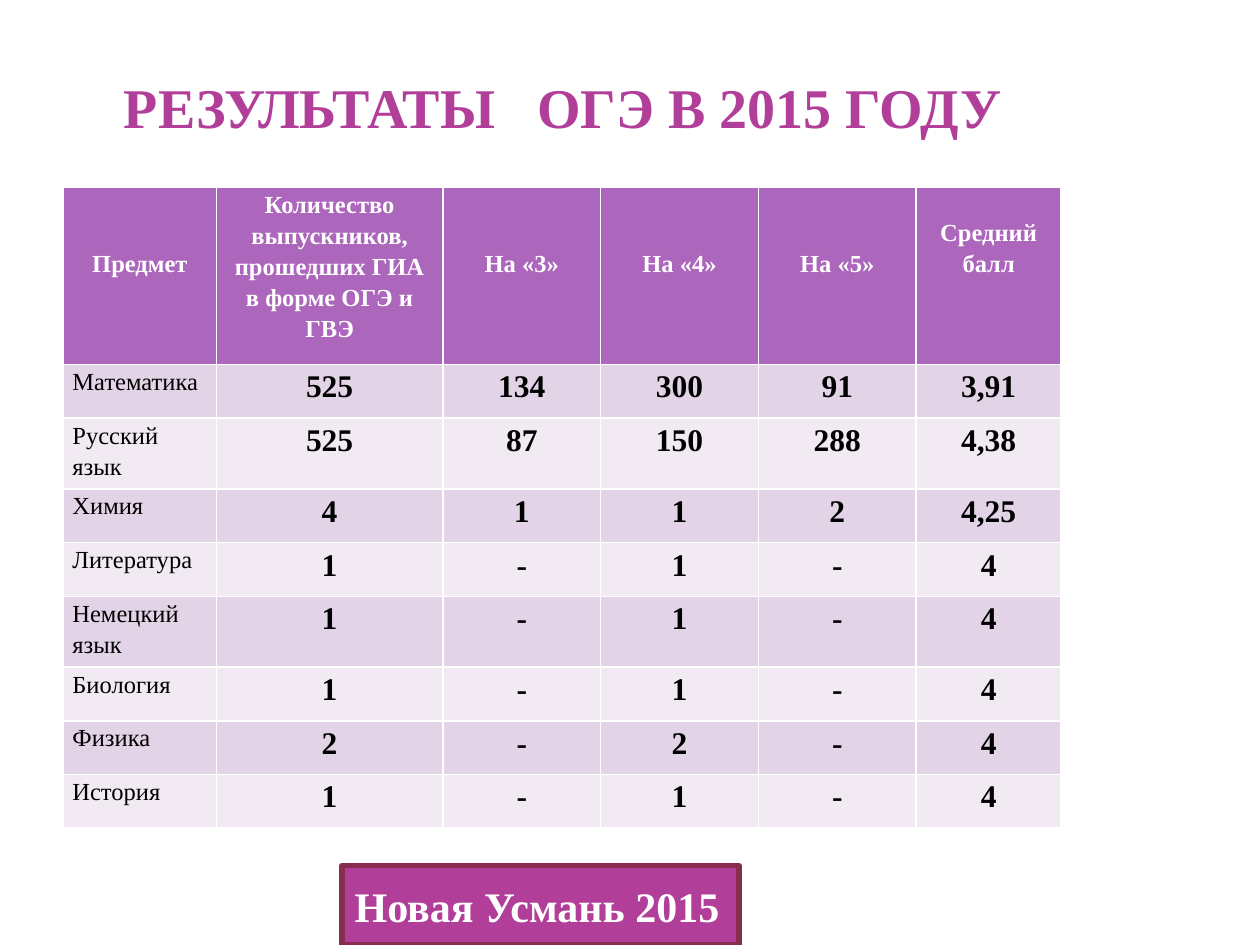
from pptx import Presentation
from pptx.dml.color import RGBColor
from pptx.enum.shapes import MSO_SHAPE
from pptx.enum.text import MSO_ANCHOR, PP_ALIGN
from pptx.util import Cm, Pt

RECTANGLE = MSO_SHAPE.RECTANGLE
TOP, MIDDLE, BOTTOM = MSO_ANCHOR.TOP, MSO_ANCHOR.MIDDLE, MSO_ANCHOR.BOTTOM
LEFT, CENTER = PP_ALIGN.LEFT, PP_ALIGN.CENTER

WHITE = RGBColor(0xFF, 0xFF, 0xFF)
BLACK = RGBColor(0x00, 0x00, 0x00)
MAGENTA = RGBColor(0xB1, 0x3F, 0x9A)
MAROON = RGBColor(0x88, 0x2D, 0x4D)
PURPLE = RGBColor(0xAC, 0x66, 0xBB)
BANDS = (RGBColor(0xE3, 0xD3, 0xE7), RGBColor(0xF1, 0xEA, 0xF3))

FONT = "Times New Roman"
TITLE = {"size": Pt(32), "bold": True, "color": MAGENTA}
FOOTER = {"size": Pt(24), "bold": True, "color": WHITE}
HEADER = {"size": Pt(14), "bold": True, "color": WHITE}
SUBJECT = {"size": Pt(14), "bold": False, "color": BLACK}
NUMBER = {"size": Pt(18), "bold": True, "color": BLACK}

# Header label and its distance from the top of the cell in cm
HEADERS = [
    ("Предмет", 1.19),
    ("Количество выпускников, прошедших ГИА в форме ОГЭ и ГВЭ", 0),
    ("На «3»", 1.19),
    ("На «4»", 1.19),
    ("На «5»", 1.19),
    ("Средний балл", 0.56),
]
RESULTS = [
    ("Математика", "525", "134", "300", "91", "3,91"),
    ("Русский язык", "525", "87", "150", "288", "4,38"),
    ("Химия", "4", "1", "1", "2", "4,25"),
    ("Литература", "1", "-", "1", "-", "4"),
    ("Немецкий язык", "1", "-", "1", "-", "4"),
    ("Биология", "1", "-", "1", "-", "4"),
    ("Физика", "2", "-", "2", "-", "4"),
    ("История", "1", "-", "1", "-", "4"),
]
COLUMN_WIDTHS = (3.08, 4.57, 3.18, 3.18, 3.18, 2.92)
HEADER_HEIGHT, ROW_HEIGHT, TALL_ROW_HEIGHT = 3.57, 1.08, 1.43


def write(tf, text, style, align=LEFT):
    p = tf.paragraphs[0]
    p.alignment = align
    r = p.add_run()
    r.text = text
    r.font.name = FONT
    for name, value in style.items():
        if name == "color":
            r.font.color.rgb = value
        else:
            setattr(r.font, name, value)
    return p


def add_title(s, text):
    tf = s.shapes.add_textbox(Cm(2.38), Cm(0.58), Cm(18.2), Cm(2.24)).text_frame
    frame = {"word_wrap": True, "vertical_anchor": BOTTOM,
             "margin_left": Cm(0.12), "margin_right": Cm(0.12),
             "margin_top": 0, "margin_bottom": 0}
    for name, value in frame.items():
        setattr(tf, name, value)
    write(tf, text, TITLE)


def add_footer(s, text):
    sp = s.shapes.add_shape(RECTANGLE, Cm(6.9), Cm(17.45), Cm(8), Cm(1.6))
    sp.shadow.inherit = False
    sp.fill.solid()
    sp.fill.fore_color.rgb = MAGENTA
    sp.line.color.rgb = MAROON
    sp.line.width = Pt(3.15)
    sp.text_frame.word_wrap = True
    sp.text_frame.vertical_anchor = MIDDLE
    write(sp.text_frame, text, FOOTER)


def fill_cell(cell, text, style, fill, align=CENTER, top=0):
    cell.fill.solid()
    cell.fill.fore_color.rgb = fill
    frame = {"margin_left": Cm(0.18), "margin_right": Cm(0.18),
             "margin_top": Cm(top), "margin_bottom": 0,
             "vertical_anchor": TOP}
    for name, value in frame.items():
        setattr(cell, name, value)
    write(cell.text_frame, text, style, align).line_spacing = 1.15


def add_results_table(s):
    """Draw the results; the table style supplies the white cell borders."""
    heights = [HEADER_HEIGHT] + [
        TALL_ROW_HEIGHT if " " in row[0] else ROW_HEIGHT for row in RESULTS]
    table = s.shapes.add_table(
        len(heights), len(COLUMN_WIDTHS), Cm(1.28), Cm(3.78),
        Cm(sum(COLUMN_WIDTHS)), Cm(sum(heights))).table
    table.horz_banding = False
    for column, width in zip(table.columns, COLUMN_WIDTHS):
        column.width = Cm(width)
    for row, height in zip(table.rows, heights):
        row.height = Cm(height)

    for col, (label, top) in enumerate(HEADERS):
        fill_cell(table.cell(0, col), label, HEADER, PURPLE, top=top)
    for i, (subject, *numbers) in enumerate(RESULTS):
        band = BANDS[i % 2]
        fill_cell(table.cell(i + 1, 0), subject, SUBJECT, band, LEFT)
        for col, number in enumerate(numbers, 1):
            fill_cell(table.cell(i + 1, col), number, NUMBER, band)


def main():
    prs = Presentation()
    prs.slide_width, prs.slide_height = Cm(25.4), Cm(19.05)
    s = prs.slides.add_slide(prs.slide_layouts[6])
    add_title(s, "РЕЗУЛЬТАТЫ   ОГЭ В 2015 ГОДУ")
    add_footer(s, "Новая Усмань 2015")
    add_results_table(s)
    prs.save("out.pptx")


if __name__ == "__main__":
    main()
